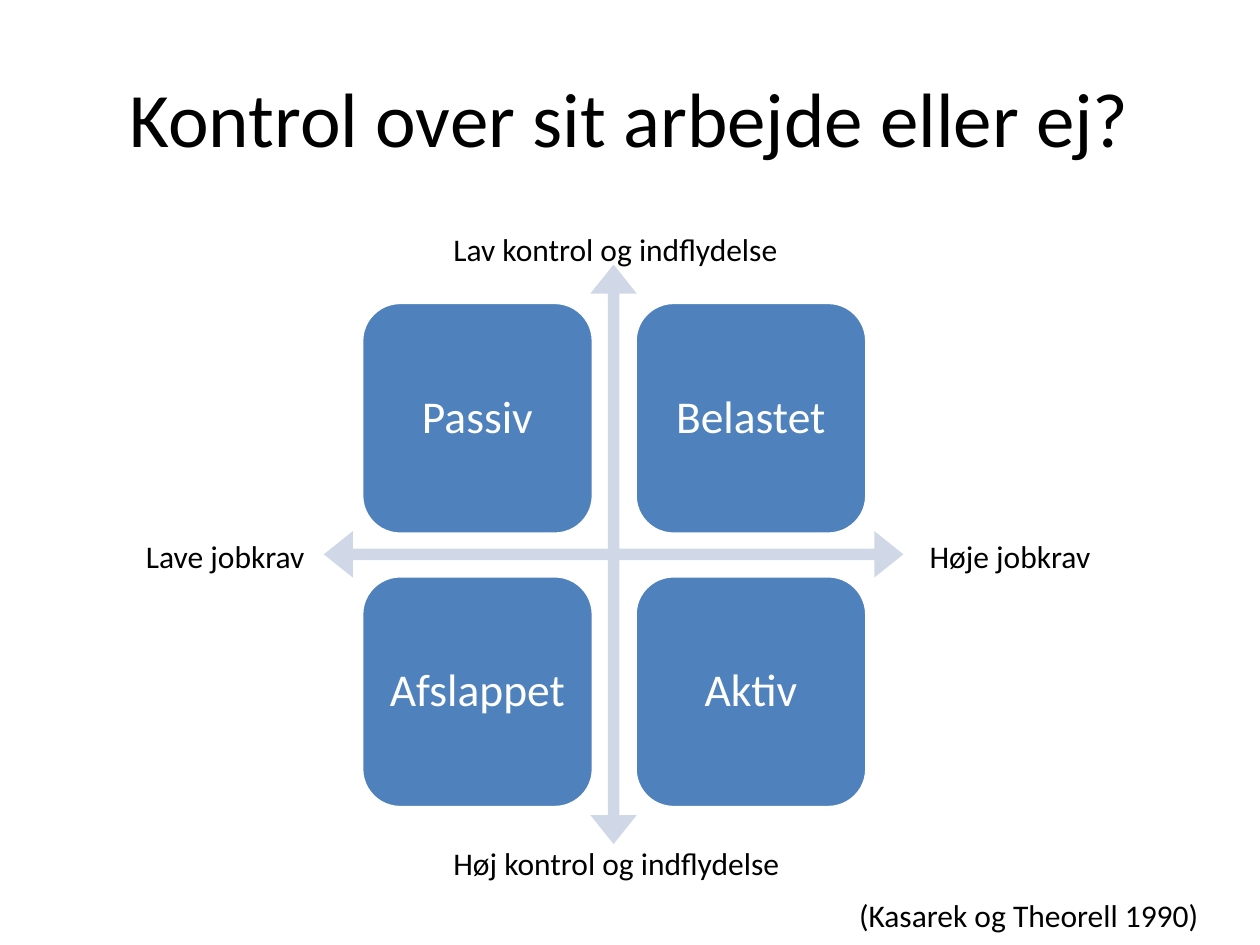
"""Build a slide with the job demand and control matrix."""
from dataclasses import dataclass

from pptx import Presentation
from pptx.dml.color import RGBColor
from pptx.enum.shapes import MSO_SHAPE
from pptx.enum.text import MSO_ANCHOR, PP_ALIGN
from pptx.util import Inches, Pt

ROUND = MSO_SHAPE.ROUNDED_RECTANGLE
ARROWS = MSO_SHAPE.QUAD_ARROW
MIDDLE = MSO_ANCHOR.MIDDLE
CENTER = PP_ALIGN.CENTER
LEFT = PP_ALIGN.LEFT

FONT = "Calibri"
BLACK, WHITE, BLUE, PALE = "000000", "FFFFFF", "4F81BD", "D0D8E8"
COLS, ROWS = 10, 7.5
SIDE, STEP = 1.84, 2.17
GRID_X, GRID_Y = 2.87, 2.4


@dataclass
class Area:
    """A place on the slide, in grid columns and rows."""
    x: float
    y: float
    w: float
    h: float


@dataclass
class Label:
    """A text beside the matrix."""
    text: str
    area: Area


@dataclass
class Tile:
    """A named quadrant of the matrix."""
    text: str
    col: int
    row: int


TILES = [
    Tile("Passiv", 0, 0),
    Tile("Belastet", 1, 0),
    Tile("Afslappet", 0, 1),
    Tile("Aktiv", 1, 1),
]
LABELS = [
    Label("Lav kontrol og indflydelse", Area(3.5, 1.78, 3.31, 0.4)),
    Label("Høj kontrol og indflydelse", Area(3.5, 6.65, 3.31, 0.4)),
    Label("Høje jobkrav", Area(7.28, 4.21, 2.6, 0.4)),
    Label("Lave jobkrav", Area(1.06, 4.21, 1.5, 0.4)),
    Label("(Kasarek og Theorell 1990)", Area(6.72, 7.06, 3.2, 0.4)),
]

deck = Presentation()
deck.slide_width, deck.slide_height = Inches(10), Inches(7.5)
slide = deck.slides.add_slide(deck.slide_layouts[5])


def paint(hue: str) -> RGBColor:
    """Turn a hex string into a colour."""
    return RGBColor.from_string(hue)


def place(area: Area) -> tuple[int, int, int, int]:
    """Turn grid units into slide lengths."""
    col, row = deck.slide_width / COLS, deck.slide_height / ROWS
    return (round(area.x * col), round(area.y * row),
            round(area.w * col), round(area.h * row))


def write(shape, text: str, size: int, hue: str, align=CENTER) -> None:
    """Set and format the text of a shape."""
    frame = shape.text_frame
    frame.text = text
    frame.word_wrap = True
    para = frame.paragraphs[0]
    para.alignment = align
    font = para.runs[0].font
    font.name, font.size = FONT, Pt(size)
    font.color.rgb = paint(hue)


def draw(kind, area: Area, hue: str):
    """Add a filled shape without outline or shadow."""
    shape = slide.shapes.add_shape(kind, *place(area))
    shape.shadow.inherit = False
    shape.fill.solid()
    shape.fill.fore_color.rgb = paint(hue)
    shape.line.fill.background()
    return shape


def draw_tile(tile: Tile) -> None:
    """Add one quadrant with its name."""
    area = Area(GRID_X + tile.col * STEP, GRID_Y + tile.row * STEP, SIDE, SIDE)
    shape = draw(ROUND, area, BLUE)
    shape.line.color.rgb = paint(WHITE)
    shape.line.width = Pt(2)
    write(shape, tile.text, 26, WHITE)
    frame = shape.text_frame
    frame.vertical_anchor = MIDDLE
    frame.margin_left = frame.margin_right = Inches(0.11)
    frame.margin_top = frame.margin_bottom = Inches(0.11)
    frame.paragraphs[0].line_spacing = 0.9


def draw_label(label: Label) -> None:
    """Add one text box."""
    box = slide.shapes.add_textbox(*place(label.area))
    write(box, label.text, 18, BLACK, LEFT)


def main() -> None:
    """Draw the slide and save it."""
    title = slide.shapes.title
    title.left, title.top, title.width, title.height = place(Area(0.5, 0.3, 9, 1.25))
    write(title, "Kontrol over sit arbejde eller ej?", 44, BLACK)
    title.text_frame.vertical_anchor = MIDDLE
    cross = draw(ARROWS, Area(2.57, 2.1, 4.6, 4.6), PALE)
    for i, share in enumerate((0.02, 0.04, 0.05)):
        cross.adjustments[i] = share
    for tile in TILES:
        draw_tile(tile)
    for label in LABELS:
        draw_label(label)
    deck.save("out.pptx")


if __name__ == "__main__":
    main()
